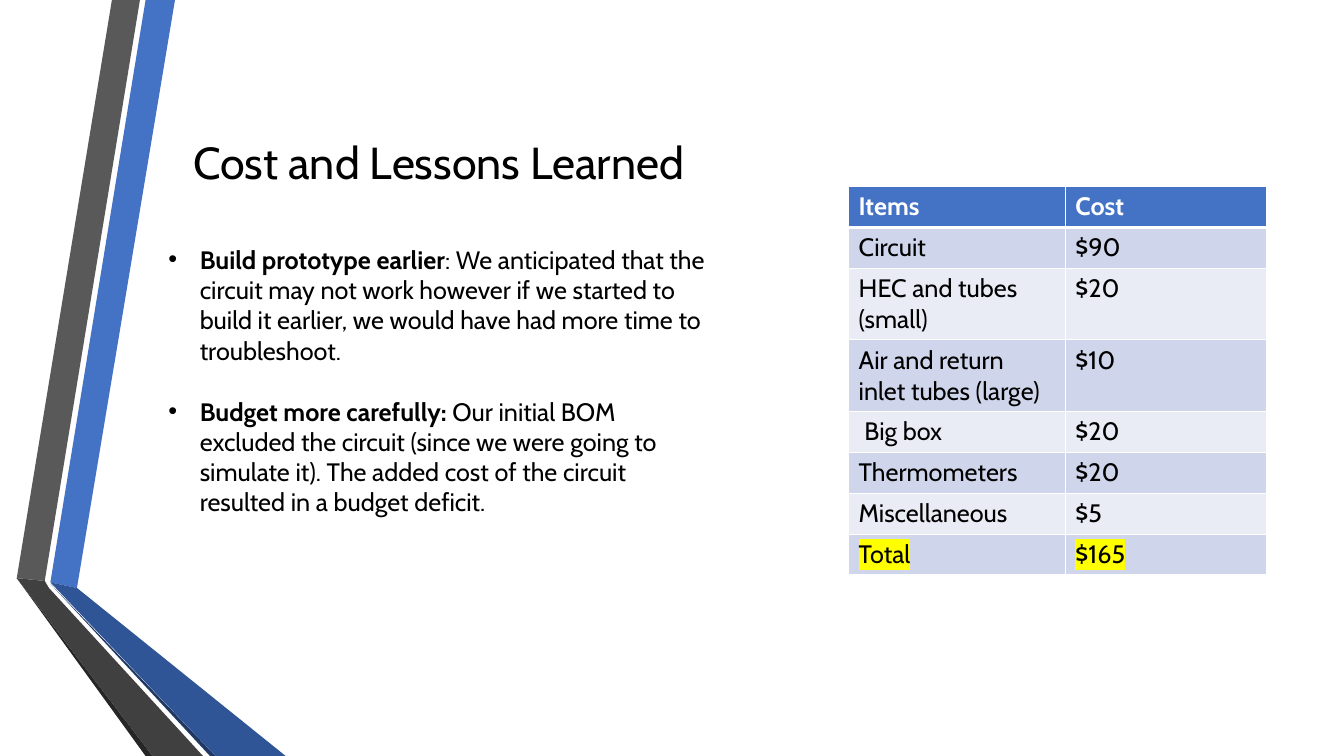
import pptx
import pptx.dml.color
import pptx.enum.text
import pptx.oxml
import pptx.oxml.ns
import pptx.util

Pt = pptx.util.Pt
FONT = "Cabin"
RIBBONS = [
    ("4472C4", [(36, 416.2), (55.4, 419.8), (124.6, 0), (104.4, 0)]),
    ("595959", [(100.1, 0), (79.9, 0), (11.5, 412.6), (31.7, 415.4)]),
    ("262626", [(11.5, 412.6), (104.4, 540), (108.7, 540)]),
    ("203864", [(36, 416.9), (149.8, 540), (154.1, 540)]),
    ("2F5597", [(36, 416.5), (154.1, 540), (203.8, 540), (55.4, 419.8)]),
    ("404040", [(145.4, 540), (34.6, 419.8), (31.7, 415.4), (11.5, 412.6), (108.7, 540)]),
]
LESSONS = [
    ("Build prototype earlier",
     ": We anticipated that the circuit may not work however if we started to build it "
     "earlier, we would have had more time to troubleshoot."),
    ("Budget more carefully: ",
     "Our initial BOM excluded the circuit (since we were going to simulate it). "
     "The added cost of the circuit resulted in a budget deficit."),
]
COSTS = [
    ("Items", "Cost"),
    ("Circuit", "$90"),
    ("HEC and tubes (small)", "$20"),
    ("Air and return inlet tubes (large)", "$10"),
    (" Big box", "$20"),
    ("Thermometers", "$20"),
    ("Miscellaneous", "$5"),
    ("Total", "$165"),
]
ROW_HEIGHTS = [29.1, 29.1, 51, 51, 29.1, 29.1, 29.1, 29.1]
COLUMN_WIDTHS = [154.8, 144]


def rgb(value):
    """Turn a hex string into a colour."""
    return pptx.dml.color.RGBColor.from_string(value)


def add_xml(parent, body):
    """Append one DrawingML element and return it."""
    namespace = pptx.oxml.ns.nsdecls("a")
    head, mark, tail = body.partition(" ")
    element = pptx.oxml.parse_xml(f"{head} {namespace}{mark}{tail}")
    parent.append(element)
    return element


def style(run, size, color="000000", bold=False):
    """Format a run in the slide's font."""
    run.font.name = FONT
    run.font.size = Pt(size)
    run.font.bold = bold
    run.font.color.rgb = rgb(color)


def place(placeholder, left, top, width, height):
    """Move a placeholder and prepare its text frame."""
    placeholder.left, placeholder.top = Pt(left), Pt(top)
    placeholder.width, placeholder.height = Pt(width), Pt(height)
    frame = placeholder.text_frame
    frame.word_wrap = True
    frame.auto_size = pptx.enum.text.MSO_AUTO_SIZE.NONE
    frame.vertical_anchor = pptx.enum.text.MSO_ANCHOR.TOP
    return frame


def add_ribbon(shapes, color, points):
    """Draw one filled polygon of the folded ribbons."""
    builder = shapes.build_freeform(*points[0], scale=Pt(1))
    builder.add_line_segments(points[1:], close=True)
    ribbon = builder.convert_to_shape()
    ribbon.shadow.inherit = False
    ribbon.fill.solid()
    ribbon.fill.fore_color.rgb = rgb(color)
    ribbon.line.fill.background()


def fill_title(title):
    """Write the slide title."""
    frame = place(title, 113, 92.9, 401, 46)
    frame.text = "Cost and Lessons Learned"
    frame.paragraphs[0].alignment = pptx.enum.text.PP_ALIGN.CENTER
    style(frame.paragraphs[0].runs[0], 32)


def fill_lessons(body):
    """Write the bulleted lessons, each with a bold lead."""
    frame = place(body, 113, 170.8, 401, 208)
    for index, (lead, detail) in enumerate(LESSONS):
        lesson = frame.add_paragraph() if index else frame.paragraphs[0]
        properties = lesson._p.get_or_add_pPr()
        properties.set("marL", str(Pt(22.5)))
        properties.set("indent", str(Pt(-22.5)))
        add_xml(properties, '<a:buFont typeface="Arial"/>')
        add_xml(properties, '<a:buChar char="•"/>')
        lesson.space_before = Pt(22 if index else 0)
        lesson.space_after = Pt(0)
        for text, bold in ((lead, True), (detail, False)):
            run = lesson.add_run()
            run.text = text
            style(run, 18, bold=bold)


def add_borders(cell, top, bottom):
    """Give a cell white borders, with set widths above and below."""
    properties = cell._tc.get_or_add_tcPr()
    for side, width in (("L", 1), ("R", 1), ("T", top), ("B", bottom)):
        add_xml(properties, f'<a:ln{side} w="{Pt(width)}"><a:solidFill>'
                            f'<a:srgbClr val="FFFFFF"/></a:solidFill></a:ln{side}>'
                .replace('">', '" >', 1))


def highlight(run, color):
    """Mark a run with a background colour."""
    properties = run.font._element if hasattr(run.font, "_element") else run._r.get_or_add_rPr()
    mark = add_xml(properties, f'<a:highlight ><a:srgbClr val="{color}"/></a:highlight>')
    properties.find(pptx.oxml.ns.qn("a:solidFill")).addnext(mark)


def add_costs(shapes):
    """Add the banded cost table."""
    costs = shapes.add_table(len(COSTS), 2, Pt(606.2), Pt(133.2),
                             Pt(sum(COLUMN_WIDTHS)), Pt(sum(ROW_HEIGHTS))).table
    for column, width in zip(costs.columns, COLUMN_WIDTHS):
        column.width = Pt(width)
    for index, (row, height) in enumerate(zip(costs.rows, ROW_HEIGHTS)):
        row.height = Pt(height)
        header, total = index == 0, index == len(COSTS) - 1
        band = "4472C4" if header else "CFD5EA" if index % 2 else "E9EBF5"
        for cell, text in zip(row.cells, COSTS[index]):
            add_borders(cell, 3 if index == 1 else 1, 3 if header else 1)
            cell.fill.solid()
            cell.fill.fore_color.rgb = rgb(band)
            cell.text_frame.text = text
            run = cell.text_frame.paragraphs[0].runs[0]
            style(run, 18, "FFFFFF" if header else "000000", header)
            if total:
                highlight(run, "FFFF00")


def main():
    """Build the slide and save it."""
    deck = pptx.Presentation()
    deck.slide_width, deck.slide_height = Pt(960), Pt(540)
    slide = deck.slides.add_slide(deck.slide_layouts[1])
    ribbons = slide.shapes.add_group_shape()
    for color, points in RIBBONS:
        add_ribbon(ribbons.shapes, color, points)
    fill_title(slide.shapes.title)
    fill_lessons(slide.placeholders[1])
    add_costs(slide.shapes)
    deck.save("out.pptx")


if __name__ == "__main__":
    main()
